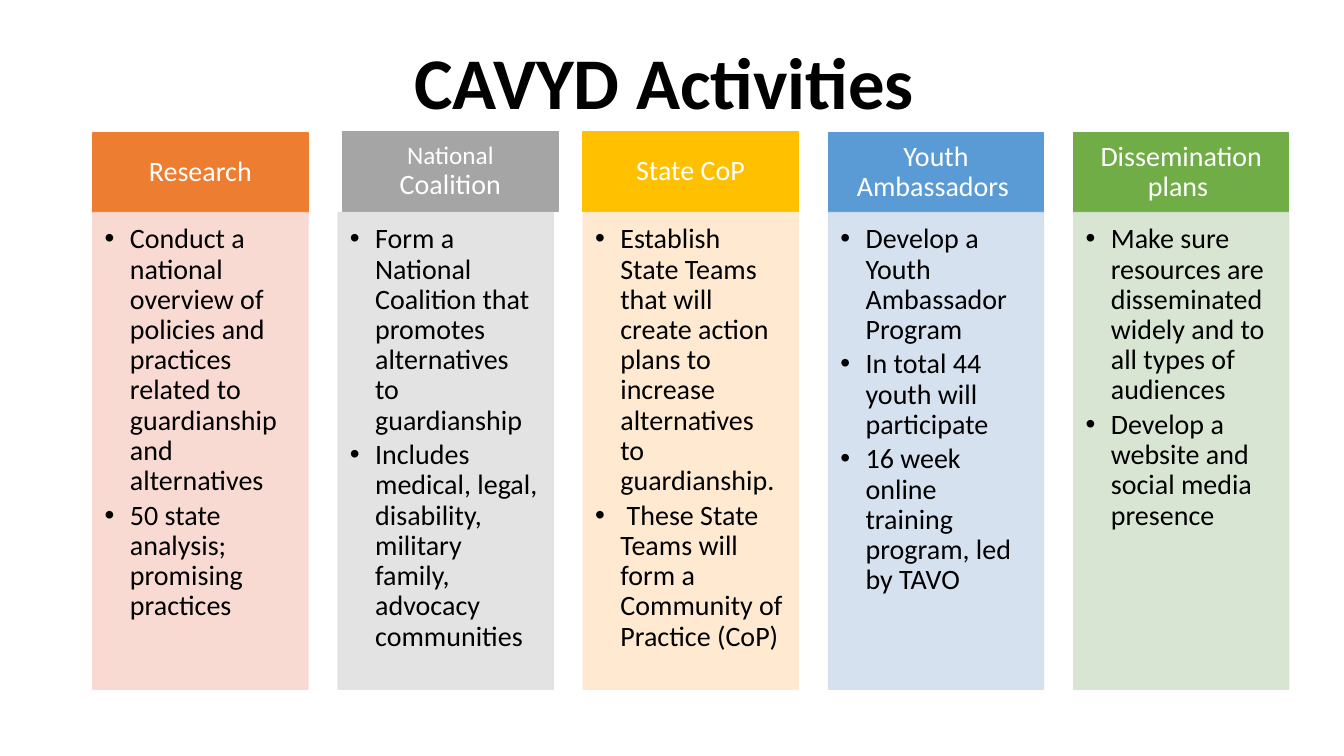
from lxml.etree import SubElement
from pptx import Presentation
from pptx.dml.color import RGBColor
from pptx.enum.shapes import MSO_SHAPE
from pptx.enum.text import MSO_ANCHOR, PP_ALIGN
from pptx.oxml.ns import qn
from pptx.util import Cm, Pt

FONT = "Calibri"
BLACK = RGBColor(0x00, 0x00, 0x00)
WHITE = RGBColor(0xFF, 0xFF, 0xFF)
ORANGE, PALE_ORANGE = RGBColor(0xED, 0x7D, 0x31), RGBColor(0xF8, 0xD7, 0xCE)
GRAY, PALE_GRAY = RGBColor(0xA5, 0xA5, 0xA5), RGBColor(0xE1, 0xE1, 0xE1)
GOLD, PALE_GOLD = RGBColor(0xFF, 0xC0, 0x00), RGBColor(0xFF, 0xE8, 0xCC)
BLUE, PALE_BLUE = RGBColor(0x5B, 0x9B, 0xD5), RGBColor(0xD2, 0xDE, 0xEF)
GREEN, PALE_GREEN = RGBColor(0x70, 0xAD, 0x47), RGBColor(0xD5, 0xE3, 0xCF)

COLUMN_LEFT, COLUMN_TOP = 2.34, 3.35
COLUMN_WIDTH, COLUMN_PITCH = 5.42, 6.18
HEADER_HEIGHT, PANEL_HEIGHT = 2.01, 12.01

# Heading spans (text, size), header shift (x, y) in cm, colours, bullet items
ACTIVITIES = [
    ([("Research", 20)], (0, 0), ORANGE, PALE_ORANGE, [
        "Conduct a national overview of policies and practices related to "
        "guardianship and alternatives",
        "50 state analysis; promising practices"]),
    ([("National ", 18), ("Coalition", 20)], (0.12, -0.03), GRAY, PALE_GRAY, [
        "Form a National Coalition that promotes alternatives to guardianship",
        "Includes medical, legal, disability, military family, advocacy "
        "communities"]),
    ([("State CoP", 20)], (-0.01, -0.03), GOLD, PALE_GOLD, [
        "Establish State Teams that will create action plans to increase "
        "alternatives to guardianship.",
        " These State Teams will form a Community of Practice (CoP)"]),
    ([("Youth Ambassadors ", 20)], (0, 0), BLUE, PALE_BLUE, [
        "Develop a Youth Ambassador Program",
        "In total 44 youth will participate",
        "16 week online training program, led by TAVO"]),
    ([("Dissemination plans ", 20)], (0, 0), GREEN, PALE_GREEN, [
        "Make sure resources are disseminated widely and to all types of "
        "audiences",
        "Develop a website and social media presence"]),
]


def add_span(para, text, size=20, color=BLACK, bold=False):
    span = para.add_run()
    span.text = text
    span.font.name = FONT
    span.font.size = Pt(size)
    span.font.bold = bold
    span.font.color.rgb = color


def format_paragraph(para, align=PP_ALIGN.LEFT, after=0, bullet=False):
    para.alignment = align
    para.line_spacing = 0.9
    para.space_after = Pt(after)
    if bullet:
        properties = para._p.get_or_add_pPr()
        properties.set("marL", str(Cm(0.635)))
        properties.set("indent", str(-Cm(0.635)))
        SubElement(properties, qn("a:buFont")).set("typeface", "Arial")
        SubElement(properties, qn("a:buChar")).set("char", "•")


def add_block(page, left, top, width, height, color, margins, anchor, alpha=100):
    """Add a filled rectangle; margins run left, top, right, bottom in cm."""
    box = page.shapes.add_shape(
        MSO_SHAPE.RECTANGLE, Cm(left), Cm(top), Cm(width), Cm(height))
    box.shadow.inherit = False
    box.fill.solid()
    box.fill.fore_color.rgb = color
    box.line.color.rgb = color
    box.line.width = Pt(1)
    if alpha < 100:
        for tint in box._element.spPr.iter(qn("a:srgbClr")):
            SubElement(tint, qn("a:alpha")).set("val", str(alpha * 1000))
    frame = box.text_frame
    frame.word_wrap = True
    frame.vertical_anchor = anchor
    (frame.margin_left, frame.margin_top,
     frame.margin_right, frame.margin_bottom) = [Cm(m) for m in margins]
    return frame


def add_title(page, left, top, width, height):
    title = page.shapes.title
    title.left, title.top = Cm(left), Cm(top)
    title.width, title.height = Cm(width), Cm(height)
    title.text_frame.vertical_anchor = MSO_ANCHOR.MIDDLE
    para = title.text_frame.paragraphs[0]
    format_paragraph(para, align=PP_ALIGN.CENTER)
    add_span(para, "CAVYD Activities ", size=52, bold=True)


def add_header(page, left, top, width, height, heading, color):
    frame = add_block(page, left, top, width, height, color,
                      (0.4, 0.23, 0.4, 0.23), MSO_ANCHOR.MIDDLE)
    para = frame.paragraphs[0]
    format_paragraph(para, align=PP_ALIGN.CENTER)
    for text, size in heading:
        add_span(para, text, size=size, color=WHITE)


def add_panel(page, left, top, width, height, items, color):
    frame = add_block(page, left, top, width, height, color,
                      (0.3, 0.3, 0.38, 0.43), MSO_ANCHOR.TOP, alpha=90)
    for index, item in enumerate(items):
        para = frame.add_paragraph() if index else frame.paragraphs[0]
        format_paragraph(para, after=3, bullet=True)
        add_span(para, item)


def add_activity(page, left, top, width, activity):
    heading, (shift_x, shift_y), color, pale_color, items = activity
    add_header(page, left + shift_x, top + shift_y, width, HEADER_HEIGHT,
               heading, color)
    add_panel(page, left, top + HEADER_HEIGHT, width, PANEL_HEIGHT,
              items, pale_color)


def main():
    deck = Presentation()
    deck.slide_width, deck.slide_height = Cm(33.87), Cm(19.05)
    page = deck.slides.add_slide(deck.slide_layouts[5])
    add_title(page, 2.34, 0.58, 29.21, 3.15)
    for index, activity in enumerate(ACTIVITIES):
        add_activity(page, COLUMN_LEFT + index * COLUMN_PITCH, COLUMN_TOP,
                     COLUMN_WIDTH, activity)
    deck.save("out.pptx")


if __name__ == "__main__":
    main()
